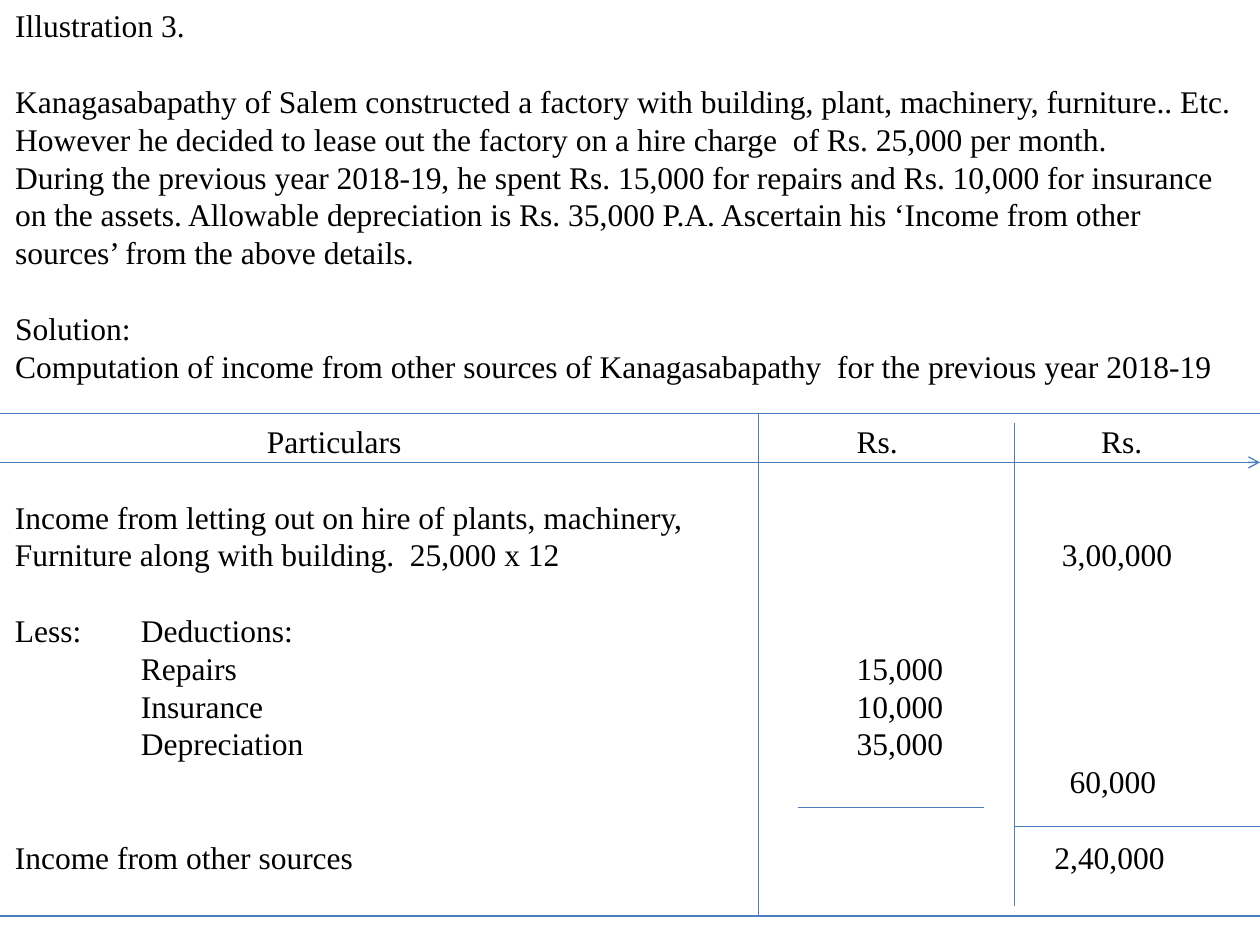
"""Build a slide with a worked illustration of income from other sources."""
import pptx
import pptx.dml.color
import pptx.enum.shapes
import pptx.enum.text
import pptx.oxml.ns
import pptx.util
from lxml import etree

Inches = pptx.util.Inches
COLORS = {"text": "000000", "rule": "4B7EBC"}
LEFT, TOP, RIGHT, BOTTOM = 0.02, 3.28, 10, 7.27
INNER_EDGE, OUTER_EDGE = 6.02, 8.05
PROBLEM = [
    ("Kanagasabapathy of Salem constructed a factory with building, plant, machinery, furniture.. Etc. "
     "However he decided to lease out the factory on a hire charge  of Rs. 25,000 per month.", 0, 0),
    ("During the previous year 2018-19, he spent Rs. 15,000 for repairs and Rs. 10,000 for insurance "
     "on the assets. Allowable depreciation is Rs. 35,000 P.A. Ascertain his ‘Income from other "
     "sources’ from the above details.", 0, 0),
    ("Solution:", 1, 0),
    ("Computation of income from other sources of Kanagasabapathy  for the previous year 2018-19", 0, 0),
]
PARTICULARS = [
    ("Particulars", 0, 2),
    ("Income from letting out on hire of plants, machinery,", 1, 0),
    ("Furniture along with building.  25,000 x 12", 0, 0),
    ("Less:\tDeductions:", 1, 0),
    ("Repairs", 0, 1),
    ("Insurance", 0, 1),
    ("Depreciation", 0, 1),
    ("Income from other sources", 2, 0),
]
DEDUCTIONS = [
    ("Rs.", 0, 0.68),
    ("15,000", 5, 0.68),
    ("10,000", 0, 0.68),
    ("35,000", 0, 0.68),
]
TOTALS = [
    ("Rs.", 0, 0.59),
    ("3,00,000", 2, 0.28),
    ("60,000", 5, 0.34),
    ("2,40,000", 1, 0.22),
]
COLUMNS = [
    (LEFT, INNER_EDGE, PARTICULARS),
    (INNER_EDGE, OUTER_EDGE, DEDUCTIONS),
    (OUTER_EDGE, RIGHT, TOTALS),
]
RULES = [
    (0, TOP, RIGHT, TOP),
    (INNER_EDGE, TOP, INNER_EDGE, BOTTOM),
    (OUTER_EDGE, 3.36, OUTER_EDGE, 7.19),
    (0, BOTTOM, RIGHT, BOTTOM),
    (OUTER_EDGE, 6.56, RIGHT, 6.56),
    (6.33, 6.41, 7.81, 6.41),
]


class SlideWriter:
    """Hold the text style and the current slide."""

    font = "Times New Roman"
    size = pptx.util.Pt(18)
    line_height = 21.6

    def __init__(self, slide):
        """Keep the slide to write on."""
        self.slide = slide

    def fill(self, shape, left, top, right, height, items):
        """Place a text shape and write its paragraphs of text, gap in lines and indent."""
        shape.left, shape.top = Inches(left), Inches(top)
        shape.width, shape.height = Inches(right - left), Inches(height)
        text_frame = shape.text_frame
        text_frame.word_wrap = True
        text_frame.auto_size = pptx.enum.text.MSO_AUTO_SIZE.NONE
        text_frame.vertical_anchor = pptx.enum.text.MSO_ANCHOR.TOP
        for index, (text, gap, indent) in enumerate(items):
            paragraph = text_frame.add_paragraph() if index else text_frame.paragraphs[0]
            self.paragraph(paragraph, text, gap, indent)

    def paragraph(self, paragraph, text, gap, indent):
        """Format one paragraph and add its run."""
        properties = paragraph._p.get_or_add_pPr()
        properties.set("marL", str(Inches(indent)))
        properties.set("indent", "0")
        etree.SubElement(properties, pptx.oxml.ns.qn("a:buNone"))
        paragraph.alignment = pptx.enum.text.PP_ALIGN.LEFT
        paragraph.line_spacing = pptx.util.Pt(self.line_height)
        paragraph.space_before = pptx.util.Pt(gap * self.line_height)
        paragraph.space_after = pptx.util.Pt(0)
        run = paragraph.add_run()
        run.text = text
        run.font.name, run.font.size = self.font, self.size
        run.font.color.rgb = pptx.dml.color.RGBColor.from_string(COLORS["text"])

    def title(self, text):
        """Fill the title placeholder."""
        self.fill(self.slide.shapes.title, LEFT, 0, RIGHT, 0.45, [(text, 0, 0)])

    def body(self, items):
        """Fill the body placeholder."""
        self.fill(self.slide.placeholders[1], LEFT, 0.6, RIGHT, 2.6, items)

    def column(self, left, right, items):
        """Add one ledger column as a text box."""
        self.fill(self.slide.shapes.add_textbox(0, 0, 0, 0), left, 3.3, right, 3.8, items)

    def rule(self, points, arrow=False):
        """Draw a ruled line, with an arrowhead if asked."""
        connector = self.slide.shapes.add_connector(
            pptx.enum.shapes.MSO_CONNECTOR.STRAIGHT, *map(Inches, points))
        connector.line.width = pptx.util.Pt(0.75)
        connector.line.color.rgb = pptx.dml.color.RGBColor.from_string(COLORS["rule"])
        if arrow:
            etree.SubElement(connector.line._get_or_add_ln(), pptx.oxml.ns.qn("a:tailEnd"), type="arrow")
        etree.SubElement(connector._element.spPr, pptx.oxml.ns.qn("a:effectLst"))


def main():
    """Build and save the presentation."""
    presentation = pptx.Presentation()
    presentation.slide_width, presentation.slide_height = Inches(10), Inches(7.5)
    writer = SlideWriter(presentation.slides.add_slide(presentation.slide_layouts[1]))
    writer.title("Illustration 3.")
    writer.body(PROBLEM)
    for left, right, items in COLUMNS:
        writer.column(left, right, items)
    for points in RULES:
        writer.rule(points)
    writer.rule((0, 3.67, RIGHT, 3.67), arrow=True)
    presentation.save("out.pptx")


if __name__ == "__main__":
    main()
